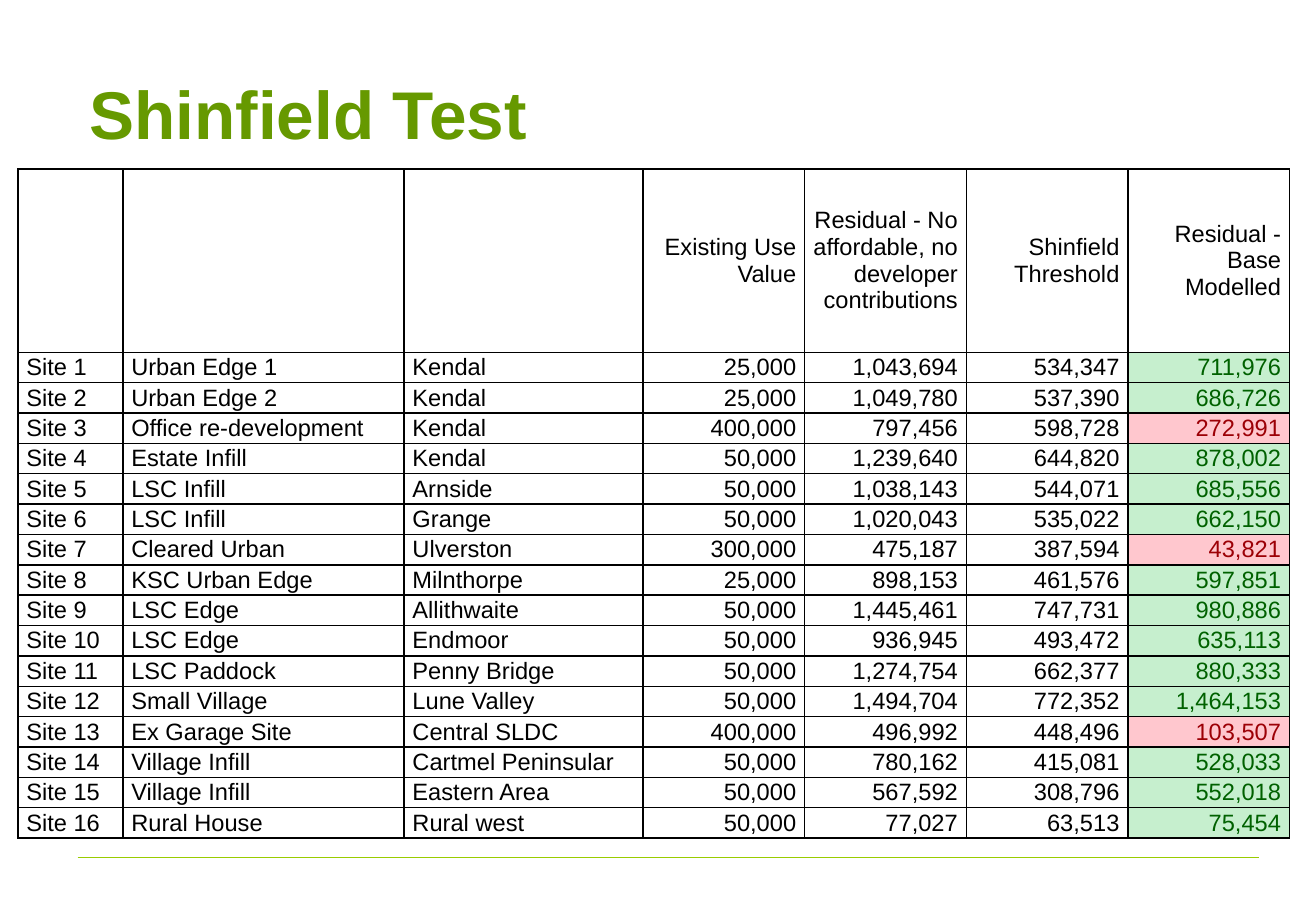
from dataclasses import dataclass
from typing import NamedTuple

from lxml.etree import SubElement
from pptx import Presentation
from pptx.dml.color import RGBColor
from pptx.enum.shapes import MSO_CONNECTOR
from pptx.enum.text import MSO_ANCHOR, MSO_AUTO_SIZE, PP_ALIGN
from pptx.oxml.ns import qn
from pptx.slide import Slide
from pptx.table import _Cell
from pptx.text.text import TextFrame
from pptx.util import Emu, Inches, Pt


@dataclass(frozen=True)
class Theme:
    font: str = "Arial"
    title_size: int = 40
    table_size: int = 14
    title: str = "669900"
    rule: str = "99CC00"
    text: str = "000000"
    paper: str = "FFFFFF"
    border: str = "000000"
    pass_text: str = "006100"
    pass_fill: str = "C6EFCE"
    fail_text: str = "9C0006"
    fail_fill: str = "FFC7CE"
    border_width: float = 1
    rule_width: float = 0.75


class Site(NamedTuple):
    kind: str
    place: str
    existing_use: int
    residual: int
    threshold: int
    base_modelled: int


class CellStyle(NamedTuple):
    color: str
    fill: str
    align: PP_ALIGN


THEME = Theme()
SLIDE_WIDTH, SLIDE_HEIGHT = Inches(10.83), Inches(7.5)

# Grid: one column is a figure column, one row is a site row
GRID_COLUMN, GRID_ROW = Inches(1.33), SLIDE_HEIGHT // 30
LABEL_COLUMNS = 3
COLUMN_SPANS = (0.65, 1.74, 1.48, 1, 1, 1, 1)
HEADER_ROWS = 6.04

HEADINGS = (
    "", "", "",
    "Existing Use Value",
    "Residual - No affordable, no developer contributions",
    "Shinfield Threshold",
    "Residual - Base Modelled",
)

SITES = (
    Site("Urban Edge 1", "Kendal", 25000, 1043694, 534347, 711976),
    Site("Urban Edge 2", "Kendal", 25000, 1049780, 537390, 686726),
    Site("Office re-development", "Kendal", 400000, 797456, 598728, 272991),
    Site("Estate Infill", "Kendal", 50000, 1239640, 644820, 878002),
    Site("LSC Infill", "Arnside", 50000, 1038143, 544071, 685556),
    Site("LSC Infill", "Grange", 50000, 1020043, 535022, 662150),
    Site("Cleared Urban", "Ulverston", 300000, 475187, 387594, 43821),
    Site("KSC Urban Edge", "Milnthorpe", 25000, 898153, 461576, 597851),
    Site("LSC Edge", "Allithwaite", 50000, 1445461, 747731, 980886),
    Site("LSC Edge", "Endmoor", 50000, 936945, 493472, 635113),
    Site("LSC Paddock", "Penny Bridge", 50000, 1274754, 662377, 880333),
    Site("Small Village", "Lune Valley", 50000, 1494704, 772352, 1464153),
    Site("Ex Garage Site", "Central SLDC", 400000, 496992, 448496, 103507),
    Site("Village Infill", "Cartmel Peninsular", 50000, 780162, 415081, 528033),
    Site("Village Infill", "Eastern Area", 50000, 567592, 308796, 552018),
    Site("Rural House", "Rural west", 50000, 77027, 63513, 75454),
)

LABEL = CellStyle(THEME.text, THEME.paper, PP_ALIGN.LEFT)
FIGURE = CellStyle(THEME.text, THEME.paper, PP_ALIGN.RIGHT)
PASSED = CellStyle(THEME.pass_text, THEME.pass_fill, PP_ALIGN.RIGHT)
FAILED = CellStyle(THEME.fail_text, THEME.fail_fill, PP_ALIGN.RIGHT)


def columns(count: float) -> Emu:
    return Emu(round(count * GRID_COLUMN))


def rows(count: float) -> Emu:
    return Emu(round(count * GRID_ROW))


def write(frame: TextFrame, text: str, size: int, color: str,
          align: PP_ALIGN, bold: bool = False) -> None:
    paragraph = frame.paragraphs[0]
    paragraph.alignment = align
    run = paragraph.add_run()
    run.text = text
    run.font.name = THEME.font
    run.font.size = Pt(size)
    run.font.bold = bold
    run.font.color.rgb = RGBColor.from_string(color)


def draw_rule(slide: Slide) -> None:
    rule = slide.shapes.add_connector(
        MSO_CONNECTOR.STRAIGHT, columns(0.48), rows(28.24), columns(7.79), rows(28.24))
    rule.line.color.rgb = RGBColor.from_string(THEME.rule)
    rule.line.width = Pt(THEME.rule_width)
    SubElement(rule._element.spPr, qn("a:effectLst"))


def draw_title(slide: Slide, text: str) -> None:
    title = slide.shapes.title
    title.left, title.top = columns(0.48), rows(1.2)
    title.width, title.height = columns(7.33), rows(5)
    frame = title.text_frame
    frame.auto_size = MSO_AUTO_SIZE.NONE
    frame.word_wrap = True
    frame.vertical_anchor = MSO_ANCHOR.MIDDLE
    write(frame, text, THEME.title_size, THEME.title, PP_ALIGN.LEFT, bold=True)


def add_borders(cell: _Cell) -> None:
    properties = cell._tc.get_or_add_tcPr()
    for side in ("a:lnL", "a:lnR", "a:lnT", "a:lnB"):
        line = SubElement(properties, qn(side), w=str(Pt(THEME.border_width)))
        fill = SubElement(line, qn("a:solidFill"))
        SubElement(fill, qn("a:srgbClr"), val=THEME.border)


def fill_cell(cell: _Cell, text: str, style: CellStyle) -> None:
    cell.margin_left = cell.margin_right = Inches(0.07)
    cell.margin_top = cell.margin_bottom = 0
    cell.vertical_anchor = MSO_ANCHOR.MIDDLE
    add_borders(cell)
    cell.fill.solid()
    cell.fill.fore_color.rgb = RGBColor.from_string(style.fill)
    if text:
        write(cell.text_frame, text, THEME.table_size, style.color, style.align)


def site_texts(number: int, site: Site) -> tuple[str, ...]:
    figures = (f"{value:,}" for value in site[2:])
    return (f"Site {number}", site.kind, site.place, *figures)


def row_styles(result: CellStyle) -> tuple[CellStyle, ...]:
    figure_count = len(COLUMN_SPANS) - LABEL_COLUMNS - 1
    return (LABEL,) * LABEL_COLUMNS + (FIGURE,) * figure_count + (result,)


def draw_table(slide: Slide) -> None:
    table = slide.shapes.add_table(
        len(SITES) + 1, len(COLUMN_SPANS), columns(0.11), rows(5.56),
        columns(sum(COLUMN_SPANS)), rows(HEADER_ROWS + len(SITES))).table
    table.first_row = table.horz_banding = False
    for column, span in zip(table.columns, COLUMN_SPANS):
        column.width = columns(span)

    # A site passes when its base residual beats the threshold
    content = [(HEADINGS, row_styles(FIGURE))]
    for number, site in enumerate(SITES, start=1):
        result = PASSED if site.base_modelled > site.threshold else FAILED
        content.append((site_texts(number, site), row_styles(result)))

    for index, (row, (texts, styles)) in enumerate(zip(table.rows, content)):
        row.height = rows(1 if index else HEADER_ROWS)
        for cell, text, style in zip(row.cells, texts, styles):
            fill_cell(cell, text, style)


def main() -> None:
    deck = Presentation()
    deck.slide_width, deck.slide_height = SLIDE_WIDTH, SLIDE_HEIGHT
    slide = deck.slides.add_slide(deck.slide_layouts[5])
    draw_rule(slide)
    draw_title(slide, "Shinfield Test")
    draw_table(slide)
    deck.save("out.pptx")


if __name__ == "__main__":
    main()
